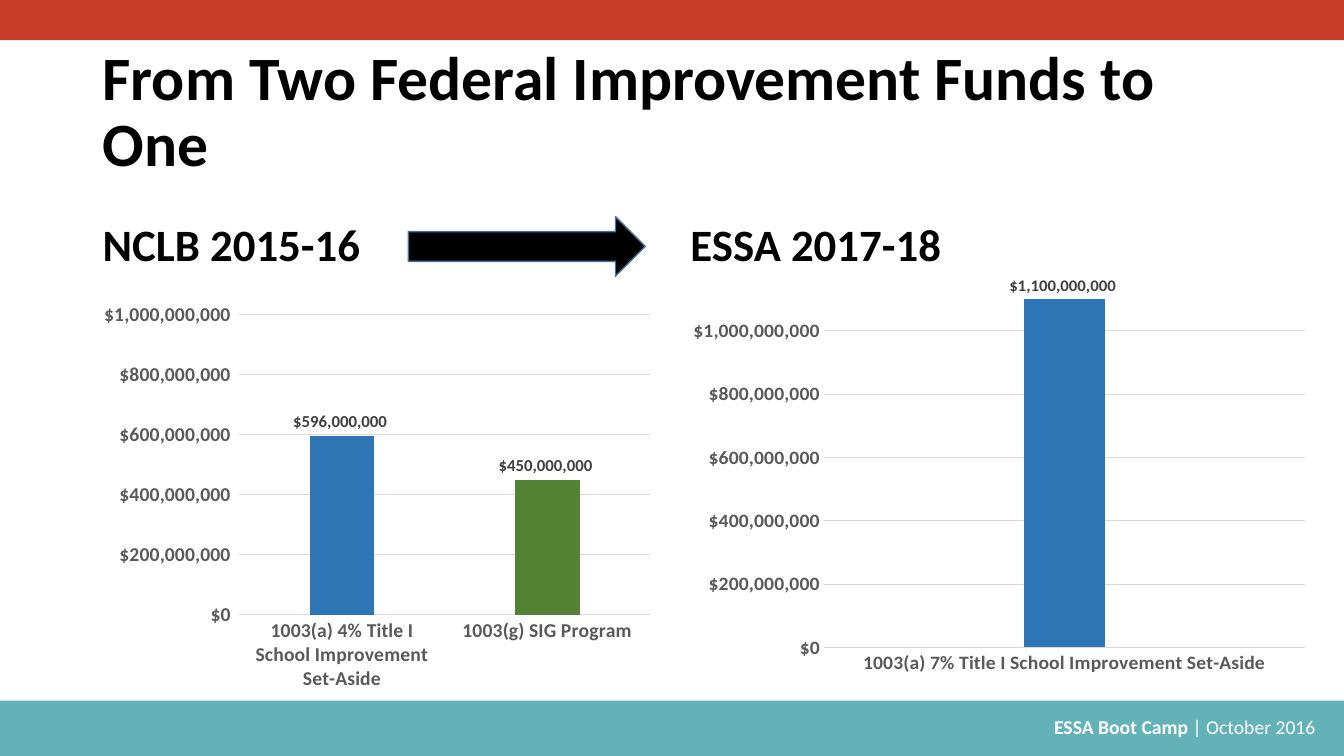
from dataclasses import dataclass

from lxml.etree import SubElement
from pptx import Presentation
from pptx.chart.data import CategoryChartData as ChartData
from pptx.dml.color import RGBColor as Rgb
from pptx.enum.chart import XL_CHART_TYPE as Kind
from pptx.enum.chart import XL_LABEL_POSITION as Spot
from pptx.enum.chart import XL_TICK_MARK as Tick
from pptx.enum.shapes import MSO_SHAPE as Form
from pptx.enum.text import MSO_ANCHOR as Anchor
from pptx.enum.text import PP_ALIGN as Align
from pptx.oxml.ns import qn
from pptx.util import Inches, Pt


@dataclass(frozen=True)
class Theme:
    font: str = "Calibri"
    red: str = "C83C2A"
    teal: str = "63B2B8"
    blue: str = "2E75B6"
    green: str = "548235"
    edge: str = "43739E"
    ink: str = "000000"
    white: str = "FFFFFF"
    axis: str = "595959"
    label: str = "404040"
    grid: str = "D9D9D9"
    title: int = 44
    head: int = 32
    small: int = 14
    tag: int = 12


THEME = Theme()
WIDE, HIGH = 13.33, 7.5
LEFT, RIGHT = 0.92, 6.75
MONEY = '"$"#,##0'
LEDGER = r'"$"#,##0_);\("$"#,##0\)'


def paint(font, size, color, bold=True):
    font.name = THEME.font
    font.size = Pt(size)
    font.bold = bold
    font.color.rgb = Rgb.from_string(color)


def add_form(slide, form, box, fill, edge=None):
    shape = slide.shapes.add_shape(form, *map(Inches, box))
    shape.shadow.inherit = False
    shape.fill.solid()
    shape.fill.fore_color.rgb = Rgb.from_string(fill)
    if edge:
        shape.line.color.rgb = Rgb.from_string(edge)
        shape.line.width = Pt(1)
    else:
        shape.line.fill.background()


def add_text(slide, box, runs, size, color, anchor, align=Align.LEFT, space=1.0):
    """Add one paragraph from (text, bold) runs."""
    frame = slide.shapes.add_textbox(*map(Inches, box)).text_frame
    frame.word_wrap = True
    frame.vertical_anchor = anchor
    para = frame.paragraphs[0]
    para.alignment = align
    para.line_spacing = space
    for text, bold in runs:
        run = para.add_run()
        run.text = text
        paint(run.font, size, color, bold)


def style_axis(axis):
    axis.major_tick_mark = axis.minor_tick_mark = Tick.NONE
    paint(axis.tick_labels.font, THEME.small, THEME.axis)


def style_line(line):
    line.color.rgb = Rgb.from_string(THEME.grid)
    line.width = Pt(0.75)


def add_bars(slide, box, bars, gap, form):
    """Add a column chart from (name, value, color) bars."""
    data = ChartData(number_format=LEDGER)
    data.categories = [name for name, _, _ in bars]
    data.add_series("Series 1", [value for _, value, _ in bars])
    chart = slide.shapes.add_chart(
        Kind.COLUMN_CLUSTERED, *map(Inches, box), data).chart
    chart.has_legend = chart.has_title = False
    paint(chart.font, 10, THEME.ink, False)

    cats, vals = chart.category_axis, chart.value_axis
    style_axis(cats)
    style_line(cats.format.line)
    style_axis(vals)
    vals.format.line.fill.background()
    vals.minimum_scale, vals.maximum_scale = 0, 1_100_000_000
    vals.major_unit = 200_000_000
    vals.has_major_gridlines = True
    style_line(vals.major_gridlines.format.line)
    vals.tick_labels.number_format = form
    vals.tick_labels.number_format_is_linked = False

    plot = chart.plots[0]
    plot.gap_width, plot.overlap = gap, -27
    plot.vary_by_categories = False
    series = plot.series[0]
    series.invert_if_negative = False
    for spot, (_, _, color) in enumerate(bars):
        fill = series.points[spot].format.fill
        fill.solid()
        fill.fore_color.rgb = Rgb.from_string(color)
    labels = series.data_labels
    labels.show_value = True
    labels.position = Spot.OUTSIDE_END
    labels.number_format = LEDGER
    labels.number_format_is_linked = False
    paint(labels.font, THEME.tag, THEME.label)


def add_frame(slide):
    """Add the top band and the footer."""
    foot = HIGH - 0.55
    add_form(slide, Form.RECTANGLE, (0, foot, WIDE, 0.55), THEME.teal)
    add_form(slide, Form.RECTANGLE, (0, 0, WIDE, 0.4), THEME.red)
    add_text(slide, (4.8, foot + 0.09, 8.39, 0.34),
             [("ESSA Boot Camp ", True), ("| October 2016 ", False)],
             THEME.small, THEME.white, Anchor.TOP, Align.RIGHT)


def add_panel(slide, box, head, bars, gap, form):
    """Add a heading with its chart below."""
    left, top, width, height = box
    add_text(slide, (left, top, 5.65, 0.9), [(head, True)],
             THEME.head, THEME.ink, Anchor.BOTTOM, space=0.9)
    add_bars(slide, (left, top + 0.9, width, height - 0.9), bars, gap, form)


def main():
    deck = Presentation()
    deck.slide_width, deck.slide_height = Inches(WIDE), Inches(HIGH)
    slide = deck.slides.add_slide(deck.slide_layouts[6])
    add_frame(slide)
    add_text(slide, (LEFT, 0.4, 11.5, 1.45),
             [("From Two Federal Improvement Funds to One", True)],
             THEME.title, THEME.ink, Anchor.MIDDLE, space=0.9)
    add_panel(slide, (RIGHT, 1.84, 6.32, 4.93), "ESSA 2017-18",
              [("1003(a) 7% Title I School Improvement Set-Aside",
                1_100_000_000, THEME.blue)], 500, MONEY)
    add_panel(slide, (LEFT, 1.84, 5.64, 5.1), "NCLB 2015-16",
              [("1003(a) 4% Title I School Improvement Set-Aside",
                596_000_000, THEME.blue),
               ("1003(g) SIG Program", 450_000_000, THEME.green)], 219, LEDGER)
    add_form(slide, Form.RIGHT_ARROW, (4.05, 2.15, 2.35, 0.59),
             THEME.ink, THEME.edge)
    deck.save("out.pptx")


if __name__ == "__main__":
    main()
